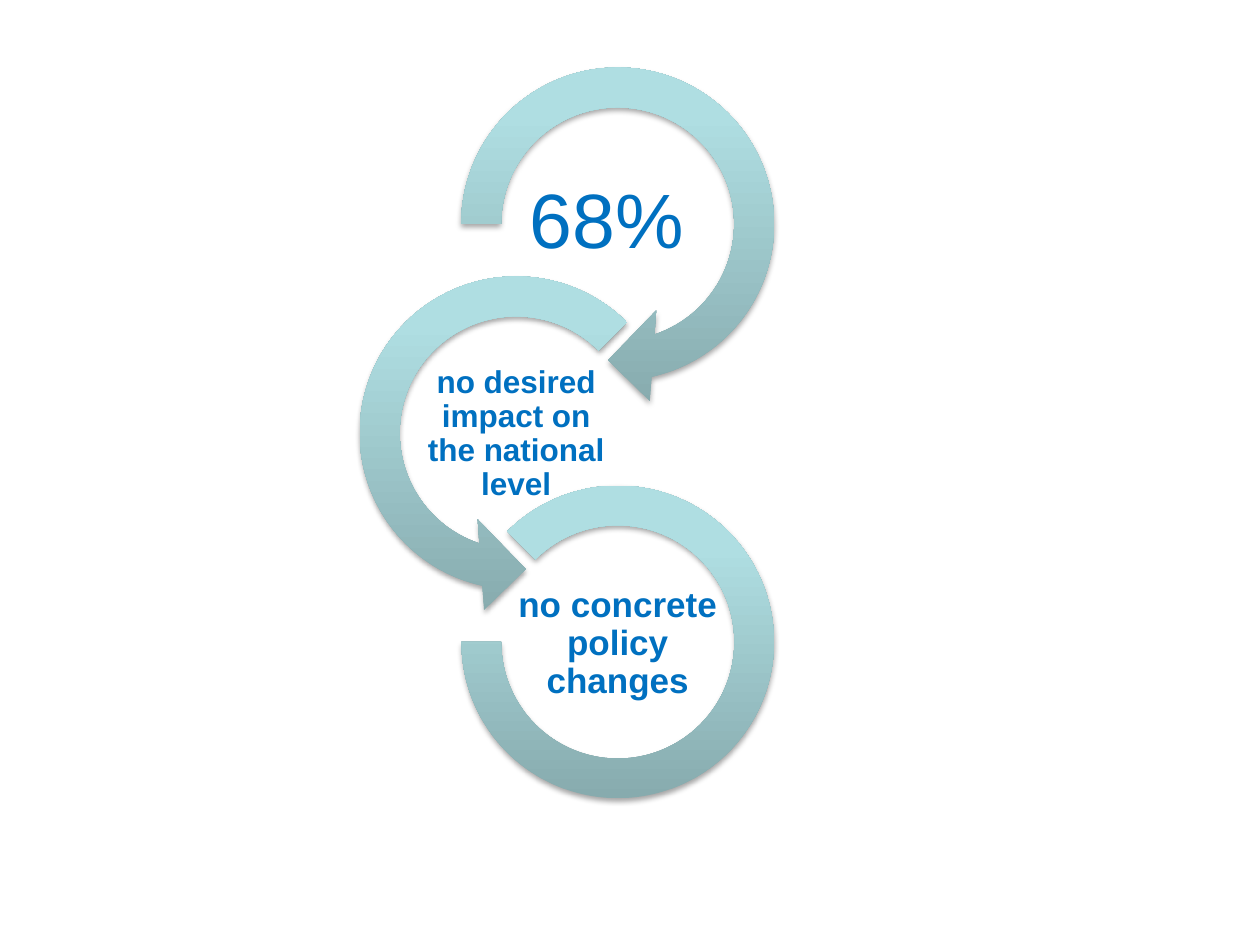
"""Builds a slide with a chain of three circular arrows and their captions."""
from copy import deepcopy

from lxml.etree import SubElement
from pptx import Presentation
from pptx.dml.color import RGBColor
from pptx.enum.shapes import MSO_SHAPE
from pptx.enum.text import MSO_ANCHOR, PP_ALIGN
from pptx.oxml.ns import qn
from pptx.util import Pt

CAPTION_BLUE = RGBColor(0x00, 0x70, 0xC0)
RING_STOPS = [
    (0, RGBColor(0x87, 0xAB, 0xAE)),
    (0.8, RGBColor(0xAF, 0xDE, 0xE2)),
    (1, RGBColor(0xAF, 0xE0, 0xE4)),
]

RIGHT_X, LEFT_X = 353, 295
FIRST_Y = 128
RING_STEP, CAPTION_STEP = 119.4, 120
CAPTION_WIDTH, CAPTION_HEIGHT = 115.2, 57.6

LINKS = [
    {"caption": "68% ", "size": 44, "bold": False, "inset": 2.2,
     "ring": MSO_SHAPE.CIRCULAR_ARROW, "diameter": 208, "centre": RIGHT_X,
     "bends": (0.11, 11.42, 45, 108, 0.125)},
    {"caption": "no desired impact on the national level", "size": 18, "bold": True, "inset": 0.8,
     "ring": MSO_SHAPE.LEFT_CIRCULAR_ARROW, "diameter": 208, "centre": LEFT_X,
     "bends": (0.11, 11.42, 63, 189, 0.125)},
    {"caption": "no concrete policy changes", "size": 20, "bold": True, "inset": 0.8,
     "ring": MSO_SHAPE.BLOCK_ARC, "diameter": 178.6, "centre": RIGHT_X,
     "bends": (135, 108, 0.127)},
]


def centred(x, y, width, height):
    return Pt(x - width / 2), Pt(y - height / 2), Pt(width), Pt(height)


def paint_gradient(ring):
    ring.fill.gradient()
    ring.fill.gradient_angle = 90
    last_stop = ring._element.spPr.findall(".//" + qn("a:gs"))[-1]
    last_stop.addnext(deepcopy(last_stop))
    for stop, (position, colour) in zip(ring.fill.gradient_stops, RING_STOPS):
        stop.position = position
        stop.color.rgb = colour


def cast_shadow(ring):
    ring.shadow.inherit = False
    effects = ring._element.spPr.find(qn("a:effectLst"))
    shadow = SubElement(effects, qn("a:outerShdw"), blurRad=str(Pt(3.1)),
                        dist=str(Pt(1.8)), dir="5400000", rotWithShape="0")
    black = SubElement(shadow, qn("a:srgbClr"), val="000000")
    SubElement(black, qn("a:alpha"), val="35000")


def add_ring(chain, link, y):
    diameter = link["diameter"]
    ring = chain.shapes.add_shape(link["ring"], *centred(link["centre"], y, diameter, diameter))
    for index, bend in enumerate(link["bends"]):
        ring.adjustments[index] = bend
    paint_gradient(ring)
    ring.line.fill.background()
    cast_shadow(ring)


def add_caption(chain, link, y):
    caption = chain.shapes.add_textbox(*centred(link["centre"], y, CAPTION_WIDTH, CAPTION_HEIGHT))
    frame = caption.text_frame
    frame.word_wrap = True
    frame.vertical_anchor = MSO_ANCHOR.MIDDLE
    frame.margin_left = frame.margin_right = Pt(link["inset"])
    frame.margin_top = frame.margin_bottom = Pt(link["inset"])
    frame.text = link["caption"]
    paragraph = frame.paragraphs[0]
    paragraph.alignment = PP_ALIGN.CENTER
    paragraph.line_spacing = 0.9
    paragraph.space_after = Pt(link["size"] * 0.35)
    font = paragraph.runs[0].font
    font.name = "Arial"
    font.size = Pt(link["size"])
    font.bold = link["bold"]
    font.color.rgb = CAPTION_BLUE


def main():
    presentation = Presentation()
    presentation.slide_width, presentation.slide_height = Pt(720), Pt(540)
    slide = presentation.slides.add_slide(presentation.slide_layouts[6])
    chain = slide.shapes.add_group_shape()
    for index, link in enumerate(LINKS):
        add_ring(chain, link, FIRST_Y + index * RING_STEP)
        add_caption(chain, link, FIRST_Y + index * CAPTION_STEP)
    presentation.save("out.pptx")


if __name__ == "__main__":
    main()
